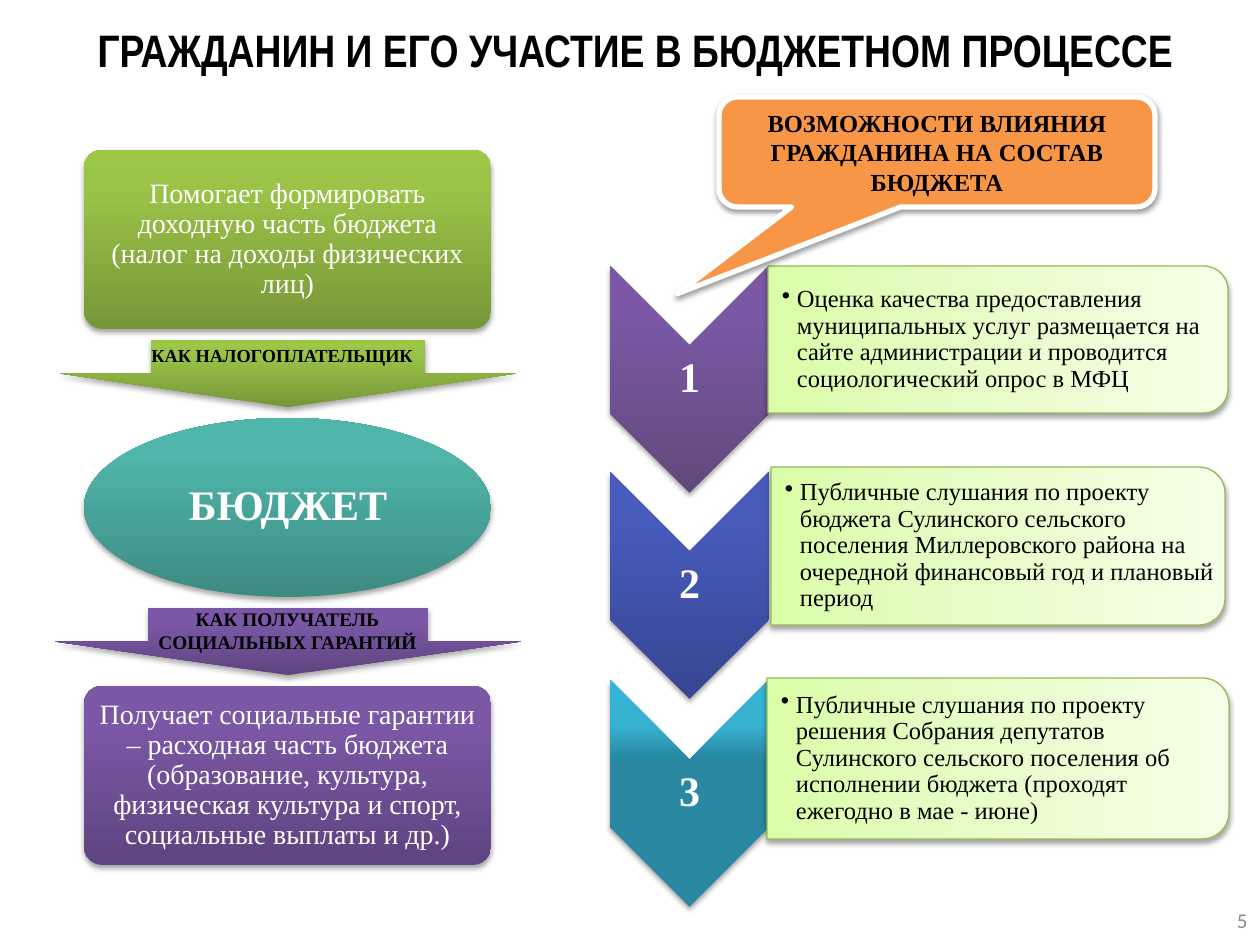
from lxml import etree
from pptx import Presentation
from pptx import util as u
from pptx.dml.color import RGBColor
from pptx.enum import shapes, text
from pptx.oxml import ns

PX = 914400 / 126
SERIF = "Times New Roman"
BLACK = RGBColor(0, 0, 0)
WHITE = RGBColor(255, 255, 255)
GREY = RGBColor(0x8C, 0x8C, 0x8C)
ORANGE = RGBColor(0xF7, 0x96, 0x46)
CARD_EDGE = RGBColor(0x98, 0xB9, 0x55)


def ramp(*stops):
    """Turn (percent, hex) pairs into gradient stops."""
    return [(percent, RGBColor.from_string(colour)) for percent, colour in stops]


GREEN = ramp((0, "779737"), (80, "9BC348"), (100, "9DC746"))
PURPLE = ramp((0, "5F4480"), (80, "7B58A6"), (100, "7C57A8"))
TEAL = ramp((0, "3D8B83"), (80, "50B5AA"), (100, "4EB8AC"))
PLUM = ramp((0, "604A7B"), (80, "7B58A6"), (100, "7C57A8"))
BLUE = ramp((0, "374691"), (80, "475BBC"), (100, "455ABF"))
CYAN = ramp((0, "2A88A2"), (65, "2787A0"), (80, "37B1D2"), (100, "34B4D6"))
LIME = ramp((0, "DAFDA7"), (35, "E4FCC2"), (100, "F5FFE7"))

STEPS = [
    ("1", 266, PLUM, (768, 266, 460, 147),
     "Оценка качества предоставления муниципальных услуг размещается на сайте "
     "администрации и проводится социологический опрос в МФЦ"),
    ("2", 472, BLUE, (771, 467, 454, 158),
     "Публичные слушания по проекту бюджета Сулинского сельского поселения "
     "Миллеровского района на очередной финансовый год и плановый период"),
    ("3", 680, CYAN, (767, 678, 462, 161),
     "Публичные слушания по проекту решения Собрания депутатов Сулинского сельского "
     "поселения об исполнении бюджета (проходят ежегодно в мае - июне)"),
]


def emu(length):
    """Convert px to EMU."""
    return u.Emu(round(length * PX))


def add_node(parent, tag, **attributes):
    """Append a drawing element with the given attributes."""
    node = etree.SubElement(parent, ns.qn(tag))
    for name, value in attributes.items():
        node.set(name, str(value))
    return node


def add_shadow(shape, opacity, distance):
    """Give a shape a soft shadow below it."""
    shape.shadow.inherit = False
    effects = shape._element.spPr.find(ns.qn("a:effectLst"))
    shadow = add_node(effects, "a:outerShdw", blurRad=u.Pt(3.1), dist=u.Pt(distance),
                      dir=5400000, rotWithShape=0)
    colour = add_node(shadow, "a:srgbClr", val=BLACK)
    add_node(colour, "a:alpha", val=opacity * 1000)


def fill_gradient(shape, stops, angle):
    """Fill a shape with a linear gradient, angle clockwise in degrees."""
    shape.fill.background()
    properties = shape._element.spPr
    old = properties.find(ns.qn("a:noFill"))
    gradient = etree.Element(ns.qn("a:gradFill"), rotWithShape="1")
    stop_list = add_node(gradient, "a:gsLst")
    for percent, colour in stops:
        stop = add_node(stop_list, "a:gs", pos=percent * 1000)
        add_node(stop, "a:srgbClr", val=colour)
    add_node(gradient, "a:lin", ang=angle * 60000, scaled=0)
    properties.replace(old, gradient)


def add_block(page, kind, area, stops, turned=False, angle=270, adjust=()):
    """Place a gradient shape so that it covers the area, turned a quarter if asked."""
    left, top, width, height = area
    if turned:
        left, top = left + (width - height) / 2, top + (height - width) / 2
        width, height = height, width
    block = page.shapes.add_shape(kind, *map(emu, (left, top, width, height)))
    block.rotation = 90 if turned else 0
    for index, value in enumerate(adjust):
        block.adjustments[index] = value
    fill_gradient(block, stops, angle)
    block.line.fill.background()
    add_shadow(block, 35, 1.8)
    return block


def write(box, words, size, colour, bold=False, font=SERIF,
          align=text.PP_ALIGN.CENTER, spacing=None, bullet=False):
    """Set the wording of a box and its format."""
    box.text_frame.word_wrap = True
    para = box.text_frame.paragraphs[0]
    para.text = words
    para.alignment = align
    para.line_spacing = spacing
    if bullet:
        para.level = 1
        properties = para._p.get_or_add_pPr()
        properties.set("marL", str(emu(15)))
        properties.set("indent", str(-emu(15)))
        add_node(properties, "a:buChar", char="•")
    for span in para.runs:
        span.font.name, span.font.size = font, u.Pt(size)
        span.font.bold, span.font.color.rgb = bold, colour


def add_label(page, area, words, size, colour, margins=None, middle=True, **style):
    """Add a text box; margins are left, top, right, bottom."""
    box = page.shapes.add_textbox(*map(emu, area))
    frame = box.text_frame
    if middle:
        frame.vertical_anchor = text.MSO_ANCHOR.MIDDLE
    if margins:
        (frame.margin_left, frame.margin_top,
         frame.margin_right, frame.margin_bottom) = map(emu, margins)
    write(box, words, size, colour, **style)
    return box


def add_step(page, number, top, stops, card_area, words):
    """Draw a numbered chevron and the card beside it."""
    add_block(page, shapes.MSO_SHAPE.CHEVRON, (610, top, 159, 227), stops, True, 180)
    add_label(page, (610, top + 79, 159, 68), number, 24, WHITE, (2, 2, 2, 2),
              bold=True, spacing=0.9)
    card = add_block(page, shapes.MSO_SHAPE.ROUND_2_SAME_RECTANGLE, card_area, LIME, True)
    card.line.color.rgb = CARD_EDGE
    card.line.width = u.Pt(0.75)
    left, card_top, width, height = card_area
    add_label(page, (left, card_top + 7, width - 8, height - 14), words, 14, BLACK,
              (14, 1, 1, 1), align=text.PP_ALIGN.LEFT, spacing=0.9, bullet=True)


def add_callout(page, area):
    """Draw the speech bubble above the steps."""
    bubble = page.shapes.add_shape(shapes.MSO_SHAPE.ROUNDED_RECTANGULAR_CALLOUT,
                                   *map(emu, area))
    for index, value in enumerate((-0.595, 1.288, 0.167)):
        bubble.adjustments[index] = value
    bubble.fill.solid()
    bubble.fill.fore_color.rgb = ORANGE
    bubble.line.color.rgb = WHITE
    bubble.line.width = u.Pt(3)
    add_shadow(bubble, 38, 1.6)
    bubble.text_frame.vertical_anchor = text.MSO_ANCHOR.MIDDLE
    write(bubble, "ВОЗМОЖНОСТИ ВЛИЯНИЯ ГРАЖДАНИНА НА СОСТАВ БЮДЖЕТА", 14, BLACK, bold=True)


def add_role(page, area, stops, words):
    """Draw a rounded box with a description of the citizen's role."""
    left, top, width, height = area
    add_block(page, shapes.MSO_SHAPE.ROUNDED_RECTANGLE, area, stops, adjust=(0.1,))
    add_label(page, (left + 5, top + 5, width - 10, height - 10), words, 16, WHITE,
              (9, 9, 9, 9), spacing=0.9)


def add_flow(page, area):
    """Draw the column of roles, arrows and the budget ellipse."""
    left, top, width, height = area
    pitch, size = 268, 179
    add_role(page, (left, top, width, size), GREEN,
             "Помогает формировать доходную часть бюджета (налог на доходы физических лиц)")
    arrow = shapes.MSO_SHAPE.RIGHT_ARROW
    add_block(page, arrow, (left - 24, top + 190, 456, 67), GREEN, True, 180, (0.6, 0.5))
    add_block(page, shapes.MSO_SHAPE.OVAL, (left, top + pitch, width, size), TEAL)
    add_label(page, (left + 60, top + pitch + 26, width - 119, 126), "БЮДЖЕТ", 24, WHITE,
              (13, 13, 13, 13), bold=True, spacing=0.9)
    add_block(page, arrow, (left - 29, top + 458, 466, 67), PURPLE, True, 180, (0.6, 0.5))
    add_role(page, (left, top + 2 * pitch, width, size), PURPLE,
             "Получает социальные гарантии – расходная часть бюджета (образование, "
             "культура, физическая культура и спорт, социальные выплаты и др.)")
    add_label(page, (left + 55, top + 188, 307, 35), "КАК НАЛОГОПЛАТЕЛЬЩИК", 10.5, BLACK,
              middle=False, bold=True, align=text.PP_ALIGN.LEFT)
    add_label(page, (left + 50, top + 451, 307, 59), "КАК ПОЛУЧАТЕЛЬ СОЦИАЛЬНЫХ ГАРАНТИЙ",
              11, BLACK, middle=False, bold=True)


def main():
    """Build and save the deck."""
    deck = Presentation()
    deck.slide_width, deck.slide_height = emu(1260), emu(945)
    page = deck.slides.add_slide(deck.slide_layouts[6])
    for step in STEPS:
        add_step(page, *step)
    add_callout(page, (719, 97, 436, 110))
    add_flow(page, (84, 150, 407, 715))
    add_label(page, (69, 16, 1134, 59), "ГРАЖДАНИН И ЕГО УЧАСТИЕ В БЮДЖЕТНОМ ПРОЦЕССЕ",
              26, BLACK, middle=False, bold=True, font="Arial Narrow")
    add_label(page, (966, 895, 294, 50), "5", 12, GREY, font="Calibri",
              align=text.PP_ALIGN.RIGHT)
    deck.save("out.pptx")


if __name__ == "__main__":
    main()
